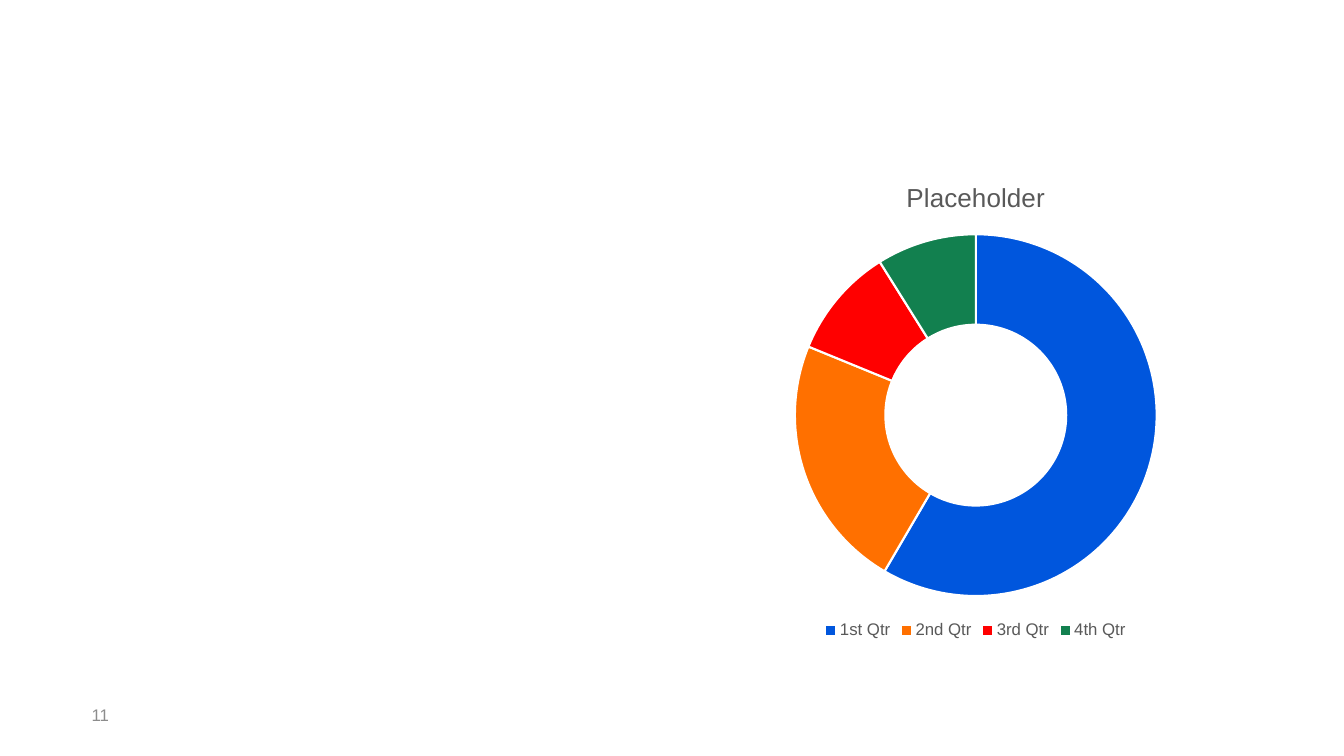
from pptx import Presentation
from pptx.chart.data import CategoryChartData
from pptx.dml.color import RGBColor
from pptx.enum.chart import XL_CHART_TYPE, XL_LEGEND_POSITION
from pptx.enum.text import MSO_ANCHOR
from pptx.util import Pt

QUARTERS = [
    ("1st Qtr", 59, "0056DD"),
    ("2nd Qtr", 23, "FF7000"),
    ("3rd Qtr", 10, "FF0000"),
    ("4th Qtr", 9, "12804F"),
]


def color(code):
    return RGBColor.from_string(code)


def style(font, size, code):
    font.name = "Arial"
    font.size = Pt(size)
    font.bold = False
    font.color.rgb = color(code)


def add_ring(slide, left, top, width, height):
    data = CategoryChartData()
    data.categories = [name for name, _, _ in QUARTERS]
    data.add_series("Series 1", [value for _, value, _ in QUARTERS])
    chart = slide.shapes.add_chart(
        XL_CHART_TYPE.DOUGHNUT, Pt(left), Pt(top), Pt(width), Pt(height), data
    ).chart
    style(chart.font, 10, "000000")

    # Title
    chart.has_title = True
    title = chart.chart_title
    title.include_in_layout = False
    title.text_frame.text = "Placeholder"
    style(title.text_frame.paragraphs[0].runs[0].font, 18.6, "595959")

    # Legend
    chart.has_legend = True
    chart.legend.position = XL_LEGEND_POSITION.BOTTOM
    chart.legend.include_in_layout = False
    style(chart.legend.font, 12, "595959")

    # Segments and hole
    plot = chart.plots[0]
    plot.vary_by_categories = True
    for hole in plot._element.xpath("c:holeSize"):
        hole.set("val", "59")
    for index, (_, _, code) in enumerate(QUARTERS):
        part = plot.series[0].points[index].format
        part.fill.solid()
        part.fill.fore_color.rgb = color(code)
        part.line.color.rgb = color("FFFFFF")
        part.line.width = Pt(1.5)


def add_number(slide, left, top, width, height):
    box = slide.shapes.add_textbox(Pt(left), Pt(top), Pt(width), Pt(height))
    frame = box.text_frame
    frame.word_wrap = True
    frame.vertical_anchor = MSO_ANCHOR.MIDDLE
    frame.text = "11"
    style(frame.paragraphs[0].runs[0].font, 12, "8C8C8C")


def main():
    deck = Presentation()
    deck.slide_width, deck.slide_height = Pt(960), Pt(540)
    slide = deck.slides.add_slide(deck.slide_layouts[6])
    slide.background.fill.solid()
    slide.background.fill.fore_color.rgb = color("FFFFFF")

    add_ring(slide, 495.4, 114.5, 403.2, 344.9)
    add_number(slide, 58.3, 496.1, 192.2, 28.8)
    deck.save("out.pptx")


if __name__ == "__main__":
    main()
